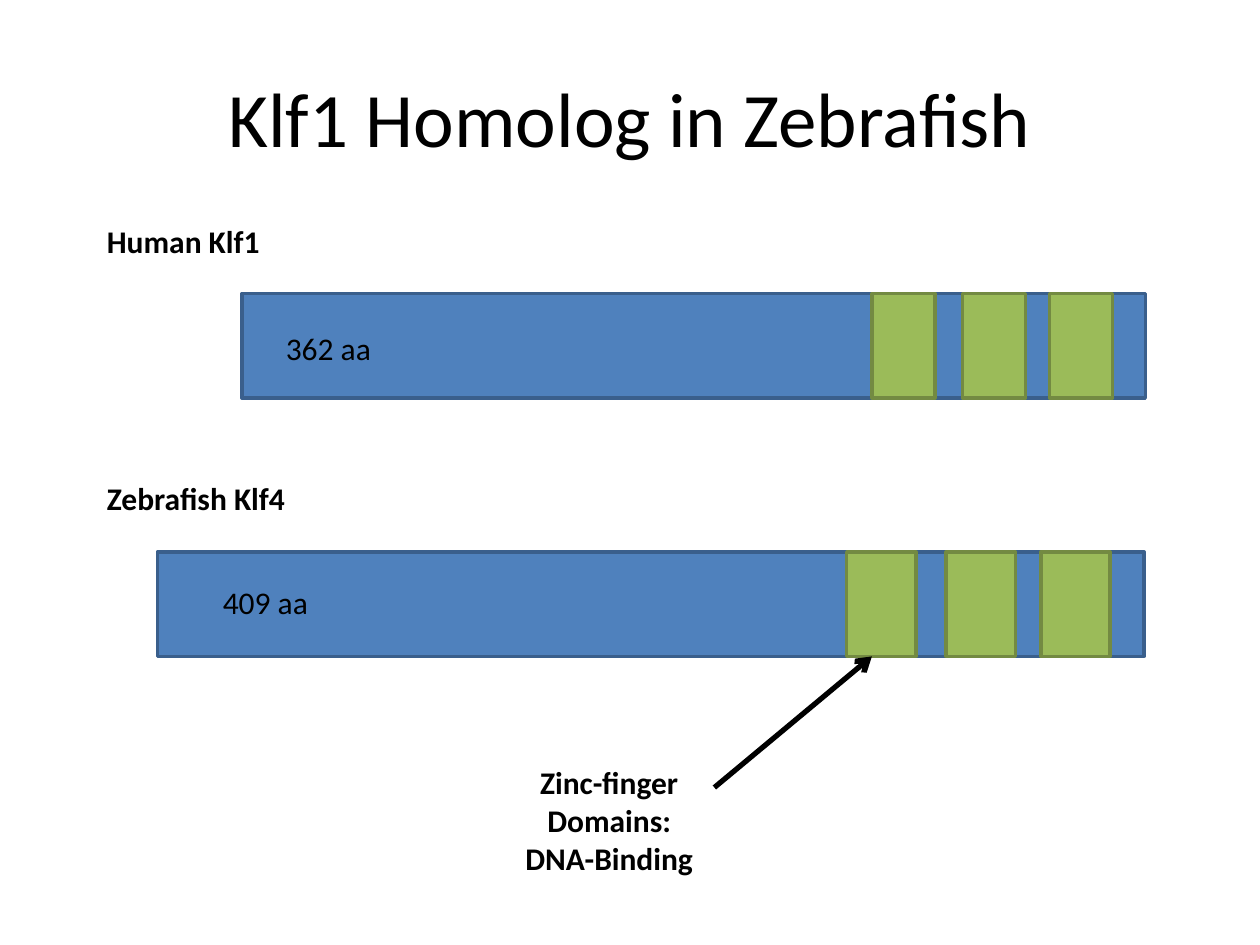
import dataclasses

import lxml.etree
import pptx
import pptx.dml.color
import pptx.enum.shapes
import pptx.enum.text
import pptx.oxml.ns
import pptx.util

Inches = pptx.util.Inches
Pt = pptx.util.Pt
ALIGN = pptx.enum.text.PP_ALIGN

FONT = "Calibri"
BLACK = "000000"
PROTEIN_FILL, PROTEIN_LINE = "4F81BD", "3A5F8C"
DOMAIN_FILL, DOMAIN_LINE = "9BBB59", "738A42"
BAR_HEIGHT = 0.83


@dataclasses.dataclass
class Protein:
    name: str
    name_top: float
    name_width: float
    length: str
    length_left: float
    length_top: float
    left: float
    top: float
    width: float
    domain_lefts: tuple[float, ...]
    domain_width: float


PROTEINS = (
    Protein("Human Klf1", 1.71, 1.42, "362 aa", 2.17, 2.56,
            1.92, 2.33, 7.17, (6.92, 7.64, 8.33), 0.5),
    Protein("Zebrafish Klf4", 3.75, 1.88, "409 aa", 1.67, 4.58,
            1.25, 4.38, 7.83, (6.72, 7.51, 8.26), 0.55),
)


def color(value: str) -> pptx.dml.color.RGBColor:
    return pptx.dml.color.RGBColor.from_string(value)


def style(paragraph, size: float, bold: bool, align) -> None:
    paragraph.alignment = align
    paragraph.font.name = FONT
    paragraph.font.size = Pt(size)
    paragraph.font.bold = bold
    paragraph.font.color.rgb = color(BLACK)


def add_label(shapes, text: str, left: float, top: float, width: float,
              height: float = 0.4, bold: bool = True, align=ALIGN.LEFT) -> None:
    label = shapes.add_textbox(Inches(left), Inches(top), Inches(width), Inches(height))
    label.text_frame.word_wrap = True
    label.text_frame.auto_size = pptx.enum.text.MSO_AUTO_SIZE.SHAPE_TO_FIT_TEXT
    label.text_frame.text = text
    style(label.text_frame.paragraphs[0], 18, bold, align)


def add_bar(shapes, left: float, top: float, width: float, fill: str, line: str) -> None:
    bar = shapes.add_shape(pptx.enum.shapes.MSO_SHAPE.RECTANGLE,
                           Inches(left), Inches(top), Inches(width), Inches(BAR_HEIGHT))
    bar.shadow.inherit = False
    bar.fill.solid()
    bar.fill.fore_color.rgb = color(fill)
    bar.line.color.rgb = color(line)
    bar.line.width = Pt(2)


def add_protein(slide, protein: Protein) -> None:
    # The bar, its domains and its length belong together
    diagram = slide.shapes.add_group_shape().shapes
    add_bar(diagram, protein.left, protein.top, protein.width, PROTEIN_FILL, PROTEIN_LINE)
    for left in protein.domain_lefts:
        add_bar(diagram, left, protein.top, protein.domain_width, DOMAIN_FILL, DOMAIN_LINE)
    add_label(diagram, protein.length, protein.length_left, protein.length_top, 1, bold=False)
    add_label(slide.shapes, protein.name, 0.75, protein.name_top, protein.name_width)


def add_arrow(slide, start: tuple[float, float], end: tuple[float, float]) -> None:
    arrow = slide.shapes.add_connector(pptx.enum.shapes.MSO_CONNECTOR.STRAIGHT,
                                       *map(Inches, start + end))
    arrow.line.color.rgb = color(BLACK)
    arrow.line.width = Pt(3)
    qn = pptx.oxml.ns.qn
    lxml.etree.SubElement(arrow.line._get_or_add_ln(), qn("a:tailEnd"), type="arrow")
    lxml.etree.SubElement(arrow._element.spPr, qn("a:effectLst"))


def main() -> None:
    presentation = pptx.Presentation()
    presentation.slide_width, presentation.slide_height = Inches(10), Inches(7.5)
    slide = presentation.slides.add_slide(presentation.slide_layouts[5])

    # Title
    title = slide.shapes.title
    title.left, title.top = Inches(0.5), Inches(0.3)
    title.width, title.height = Inches(9), Inches(1.25)
    title.text_frame.text = "Klf1 Homolog in Zebrafish"
    title.text_frame.vertical_anchor = pptx.enum.text.MSO_ANCHOR.MIDDLE
    style(title.text_frame.paragraphs[0], 44, False, ALIGN.CENTER)

    # Proteins
    for protein in PROTEINS:
        add_protein(slide, protein)

    # Domain callout
    add_arrow(slide, (5.67, 6.25), (6.92, 5.21))
    add_label(slide.shapes, "Zinc-finger Domains: DNA-Binding", 4, 6.01, 1.67, 1.01,
              align=ALIGN.CENTER)

    presentation.save("out.pptx")


if __name__ == "__main__":
    main()
